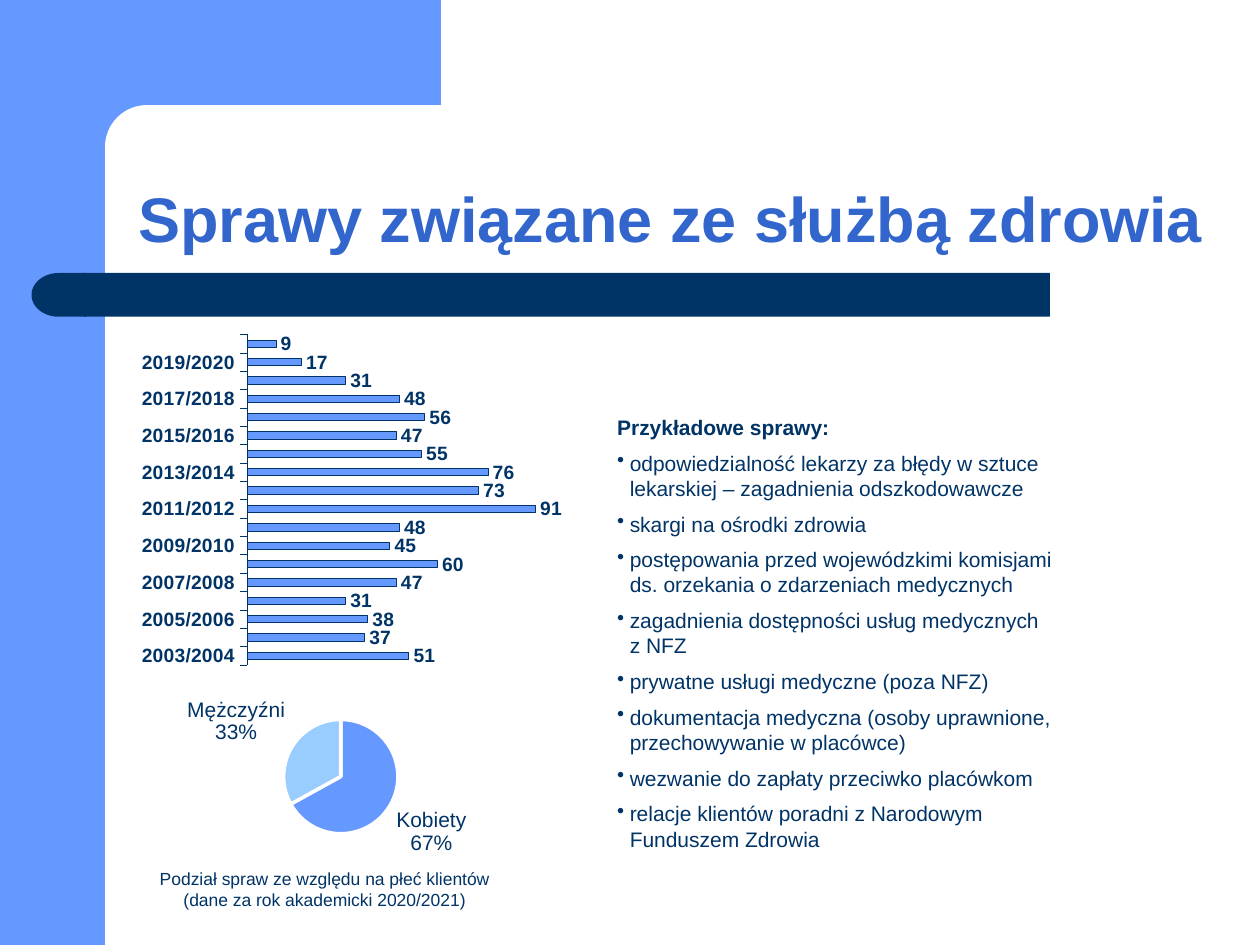
from dataclasses import dataclass

import pptx
import pptx.chart.data
import pptx.dml.color
import pptx.enum.chart
import pptx.enum.shapes
import pptx.enum.text
import pptx.oxml
import pptx.oxml.ns
import pptx.util

Pt = pptx.util.Pt
Color = pptx.dml.color.RGBColor
Chart = pptx.enum.chart
Shape = pptx.enum.shapes.MSO_SHAPE
Align = pptx.enum.text.PP_ALIGN
Anchor = pptx.enum.text.MSO_ANCHOR


@dataclass(frozen=True)
class Theme:
    """Colours, font and type sizes of the slide."""
    blue: Color = Color(0x66, 0x99, 0xFF)
    pale: Color = Color(0x99, 0xCC, 0xFF)
    navy: Color = Color(0x00, 0x33, 0x66)
    heading: Color = Color(0x33, 0x66, 0xCC)
    white: Color = Color(0xFF, 0xFF, 0xFF)
    font: str = "Arial"
    title: int = 36
    body: int = 12
    axis: int = 11
    caption: int = 10


THEME = Theme()

TITLE = "Sprawy związane ze służbą zdrowia"
CASES_HEADING = "Przykładowe sprawy:"
CASES = [
    "odpowiedzialność lekarzy za błędy w sztuce lekarskiej – zagadnienia odszkodowawcze",
    "skargi na ośrodki zdrowia",
    "postępowania przed wojewódzkimi komisjami ds. orzekania o zdarzeniach medycznych",
    "zagadnienia dostępności usług medycznych z NFZ",
    "prywatne usługi medyczne (poza NFZ)",
    "dokumentacja medyczna (osoby uprawnione, przechowywanie w placówce)",
    "wezwanie do zapłaty przeciwko placówkom",
    "relacje klientów poradni z Narodowym Funduszem Zdrowia",
]
CAPTION = "Podział spraw ze względu na płeć klientów (dane za rok akademicki 2020/2021)"
FIRST_YEAR = 2003
CASE_COUNTS = [51, 37, 38, 31, 47, 60, 45, 48, 91, 73, 76, 55, 47, 56, 48, 31, 17, 9]
CLIENT_SHARES = {"Kobiety": 67, "Mężczyźni": 33}


def points(*lengths):
    """Turn numbers into point lengths."""
    return [Pt(length) for length in lengths]


def style_font(font, size, color=THEME.navy, bold=False):
    """Set typeface, size, colour and weight."""
    font.name = THEME.font
    font.size = Pt(size)
    font.bold = bold
    font.color.rgb = color


def write(para, text, size=THEME.body, color=THEME.navy, bold=False,
          align=Align.LEFT, before=0, bullet=None):
    """Write one formatted paragraph, with an optional hanging bullet."""
    span = para.add_run()
    span.text = text
    style_font(span.font, size, color, bold)
    para.alignment = align
    para.space_before = Pt(before)
    if bullet:
        properties = para._p.get_or_add_pPr()
        properties.set("marL", str(Pt(7.2)))
        properties.set("indent", str(Pt(-7.2)))
        mark = pptx.oxml.parse_xml(
            f'<a:buChar {pptx.oxml.ns.nsdecls("a")} char="{bullet}"/>')
        properties.append(mark)


def add_block(page, kind, box, color):
    """Add one plain filled shape."""
    shape = page.shapes.add_shape(kind, *points(*box))
    shape.shadow.inherit = False
    shape.fill.solid()
    shape.fill.fore_color.rgb = color
    shape.line.fill.background()
    return shape


def add_text_box(page, box):
    """Add a wrapping text box and return its frame."""
    frame = page.shapes.add_textbox(*points(*box)).text_frame
    frame.word_wrap = True
    return frame


def add_backdrop(page, box):
    """Draw the blue corner with its rounded inner edge."""
    left, top, width, height = box
    add_block(page, Shape.RECTANGLE, (left, top, 60, height), THEME.blue)
    add_block(page, Shape.RECTANGLE, (left + 54, top, width - 54, 84), THEME.blue)
    panel = add_block(page, Shape.ROUNDED_RECTANGLE,
                      (left + 60, top + 60, 402, 48), THEME.white)
    panel.adjustments[0] = 0.5


def add_title_bar(page, box):
    """Draw the navy bar with a rounded left end."""
    left, top, width, height = box
    add_block(page, Shape.RECTANGLE, (left + 30, top, width - 30, height), THEME.navy)
    cap = add_block(page, Shape.FLOWCHART_DELAY, (left, top, 31, height), THEME.navy)
    cap.rotation = 180


def place_title(page, box):
    """Move and format the title placeholder, in front of the backdrop."""
    title = page.shapes.title
    title.left, title.top, title.width, title.height = points(*box)
    page.shapes._spTree.append(title._element)
    frame = title.text_frame
    frame.word_wrap = True
    frame.auto_size = pptx.enum.text.MSO_AUTO_SIZE.NONE
    frame.vertical_anchor = Anchor.BOTTOM
    para = frame.paragraphs[0]
    write(para, TITLE, size=THEME.title, color=THEME.heading, bold=True)
    para.line_spacing = 0.9


def add_cases(page, box):
    """List the sample cases under their heading."""
    frame = add_text_box(page, box)
    frame.margin_right = Pt(8)
    write(frame.paragraphs[0], CASES_HEADING, bold=True)
    for case in CASES:
        write(frame.add_paragraph(), case, before=6, bullet="•")


def add_chart(page, kind, box, categories, values, plot_box):
    """Add a one-series chart with a fixed inner plot area."""
    data = pptx.chart.data.CategoryChartData()
    data.categories = categories
    data.add_series("Series 1", values)
    chart = page.shapes.add_chart(kind, *points(*box), data).chart
    chart.has_title = False
    chart.has_legend = False
    style_font(chart.font, THEME.body)
    parts = "".join(f'<c:{name}Mode val="edge"/>' for name in "xy")
    parts += "".join(f'<c:{name} val="{value}"/>' for name, value in zip("xywh", plot_box))
    layout = pptx.oxml.parse_xml(
        f'<c:layout {pptx.oxml.ns.nsdecls("c")}><c:manualLayout>'
        f'<c:layoutTarget val="inner"/>{parts}</c:manualLayout></c:layout>')
    area = chart._chartSpace.chart.plotArea
    for old in area.findall(pptx.oxml.ns.qn("c:layout")):
        area.remove(old)
    area.insert(0, layout)
    return chart


def add_year_chart(page, box):
    """Draw the number of cases in each academic year."""
    years = [f"{year}/{year + 1}"
             for year in range(FIRST_YEAR, FIRST_YEAR + len(CASE_COUNTS))]
    chart = add_chart(page, Chart.XL_CHART_TYPE.BAR_CLUSTERED, box, years,
                      CASE_COUNTS, (0.28, 0.08, 0.58, 0.86))
    axis = chart.category_axis
    axis.major_tick_mark = Chart.XL_TICK_MARK.OUTSIDE
    axis.format.line.color.rgb = THEME.navy
    axis.format.line.width = Pt(0.15)
    style_font(axis.tick_labels.font, THEME.axis, bold=True)
    scale = chart.value_axis
    scale.minimum_scale, scale.maximum_scale = 0, 100
    scale.has_major_gridlines = False
    scale.visible = False
    plot = chart.plots[0]
    plot.gap_width = 150
    plot.vary_by_categories = False
    bars = plot.series[0].format
    bars.fill.solid()
    bars.fill.fore_color.rgb = THEME.blue
    bars.line.color.rgb = THEME.navy
    bars.line.width = Pt(0.25)
    labels = plot.series[0].data_labels
    labels.show_value = True
    labels.position = Chart.XL_LABEL_POSITION.OUTSIDE_END
    style_font(labels.font, THEME.axis, bold=True)


def add_client_chart(page, box):
    """Draw the share of women and men among the clients."""
    chart = add_chart(page, Chart.XL_CHART_TYPE.PIE, box, list(CLIENT_SHARES),
                      list(CLIENT_SHARES.values()), (0.42, 0.23, 0.22, 0.55))
    plot = chart.plots[0]
    plot.vary_by_categories = True
    series = plot.series[0]
    for index, color in enumerate((THEME.blue, THEME.pale)):
        slice_format = series.points[index].format
        slice_format.fill.solid()
        slice_format.fill.fore_color.rgb = color
        slice_format.line.color.rgb = THEME.white
        slice_format.line.width = Pt(2)
    labels = series.data_labels
    labels.show_value = False
    labels.show_category_name = True
    labels.show_percentage = True
    labels.position = Chart.XL_LABEL_POSITION.OUTSIDE_END
    style_font(labels.font, THEME.body)
    separator = pptx.oxml.parse_xml(
        f'<c:separator {pptx.oxml.ns.nsdecls("c")}>\n</c:separator>')
    labels._element.find(pptx.oxml.ns.qn("c:showBubbleSize")).addnext(separator)


def add_caption(page, box):
    """Write the caption below the client chart."""
    write(add_text_box(page, box).paragraphs[0], CAPTION,
          size=THEME.caption, align=Align.CENTER)


def main():
    """Build the slide and save it."""
    deck = pptx.Presentation()
    deck.slide_width, deck.slide_height = points(720, 540)
    page = deck.slides.add_slide(deck.slide_layouts[5])
    add_backdrop(page, (0, 0, 252, 540))
    add_title_bar(page, (18, 156, 582, 25))
    place_title(page, (72, 60, 630, 90))
    add_cases(page, (345.6, 233.3, 264.2, 269.3))
    add_year_chart(page, (54, 173.5, 311.8, 219.6))
    add_client_chart(page, (29.5, 383.8, 311.8, 118.8))
    add_caption(page, (76.3, 492.5, 218.2, 31))
    deck.save("out.pptx")


if __name__ == "__main__":
    main()
